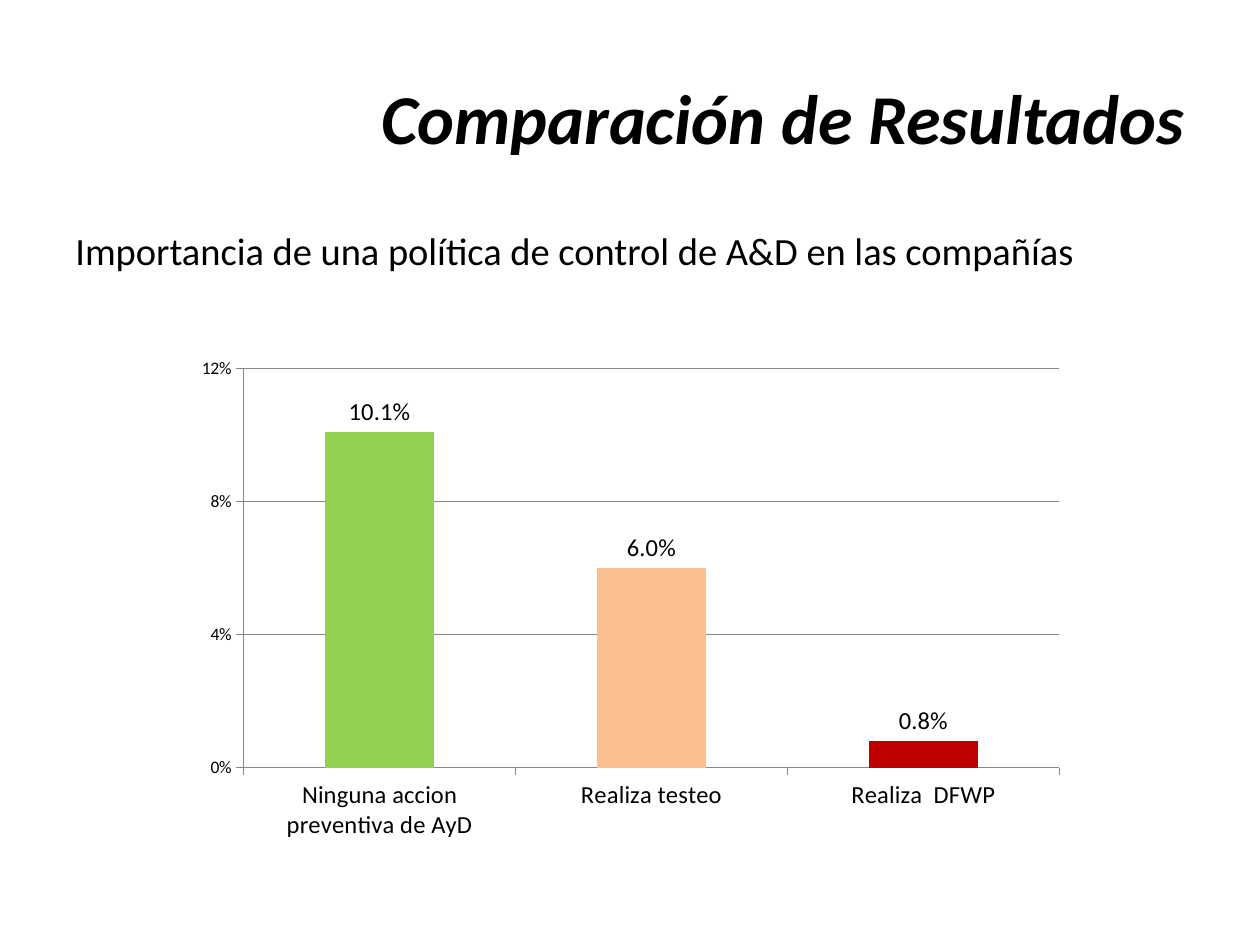
from pptx import Presentation
from pptx.chart.data import CategoryChartData
from pptx.dml.color import RGBColor
from pptx.enum.chart import XL_CHART_TYPE, XL_LABEL_POSITION, XL_TICK_MARK
from pptx.enum.text import MSO_ANCHOR, PP_ALIGN
from pptx.util import Inches, Pt

COLUMNS = XL_CHART_TYPE.COLUMN_CLUSTERED
ABOVE_BAR = XL_LABEL_POSITION.OUTSIDE_END
OUTSIDE = XL_TICK_MARK.OUTSIDE
TOP, MIDDLE = MSO_ANCHOR.TOP, MSO_ANCHOR.MIDDLE
LEFT, RIGHT = PP_ALIGN.LEFT, PP_ALIGN.RIGHT

FONT = "Calibri"
BLACK = "000000"
GRAY = "868686"

TITLE = "Comparación de Resultados"
SUBTITLE = "Importancia de una política de control de A&D en las compañías"
RESULTS = [  # category, rate, bar colour
    ("Ninguna accion preventiva de AyD", 0.101, "92D050"),
    ("Realiza testeo", 0.06, "FAC090"),
    ("Realiza  DFWP", 0.008, "C00000"),
]


def rgb(color):
    return RGBColor.from_string(color)


def style_font(font, size, emphasis=False):
    font.name = FONT
    font.size = Pt(size)
    font.bold = font.italic = emphasis
    font.color.rgb = rgb(BLACK)


def add_text(slide, text, top, height, size, align, anchor, emphasis=False):
    box = slide.shapes.add_textbox(Inches(0.5), Inches(top), Inches(9), Inches(height))
    frame = box.text_frame
    frame.word_wrap = True
    frame.vertical_anchor = anchor
    paragraph = frame.paragraphs[0]
    paragraph.text = text
    paragraph.alignment = align
    style_font(paragraph.font, size, emphasis)


def style_line(line):
    line.color.rgb = rgb(GRAY)
    line.width = Pt(0.75)


def add_results_chart(slide):
    categories, rates, bar_colors = zip(*RESULTS)
    chart_data = CategoryChartData(number_format="0.0%")
    chart_data.categories = categories
    chart_data.add_series("Series 1", rates)
    chart = slide.shapes.add_chart(
        COLUMNS, Inches(1.46), Inches(2.77), Inches(7.09), Inches(3.98), chart_data
    ).chart
    chart.has_legend = False
    chart.has_title = False
    style_font(chart.font, 10)

    for axis, size in ((chart.category_axis, 14), (chart.value_axis, 10)):
        axis.major_tick_mark = OUTSIDE
        style_font(axis.tick_labels.font, size)
        style_line(axis.format.line)

    rate_axis = chart.value_axis
    rate_axis.minimum_scale = 0
    rate_axis.maximum_scale = 0.12
    rate_axis.major_unit = 0.04
    rate_axis.tick_labels.number_format = "0%"
    rate_axis.tick_labels.number_format_is_linked = False
    rate_axis.has_major_gridlines = True
    style_line(rate_axis.major_gridlines.format.line)

    plot = chart.plots[0]
    plot.vary_by_categories = False
    plot.gap_width = 150
    bars = plot.series[0]
    bars.format.fill.solid()
    bars.format.fill.fore_color.rgb = rgb("4F81BD")
    for index, color in enumerate(bar_colors):
        fill = bars.points[index].format.fill
        fill.solid()
        fill.fore_color.rgb = rgb(color)

    labels = bars.data_labels
    labels.show_value = True
    labels.number_format = "0.0%"
    labels.number_format_is_linked = False
    labels.position = ABOVE_BAR
    style_font(labels.font, 14)


def main():
    deck = Presentation()
    deck.slide_width = Inches(10)
    deck.slide_height = Inches(7.5)
    slide = deck.slides.add_slide(deck.slide_layouts[6])
    add_text(slide, TITLE, 0.3, 1.25, 40, RIGHT, MIDDLE, emphasis=True)
    add_text(slide, SUBTITLE, 1.75, 1.13, 22, LEFT, TOP)
    add_results_chart(slide)
    deck.save("out.pptx")


if __name__ == "__main__":
    main()
